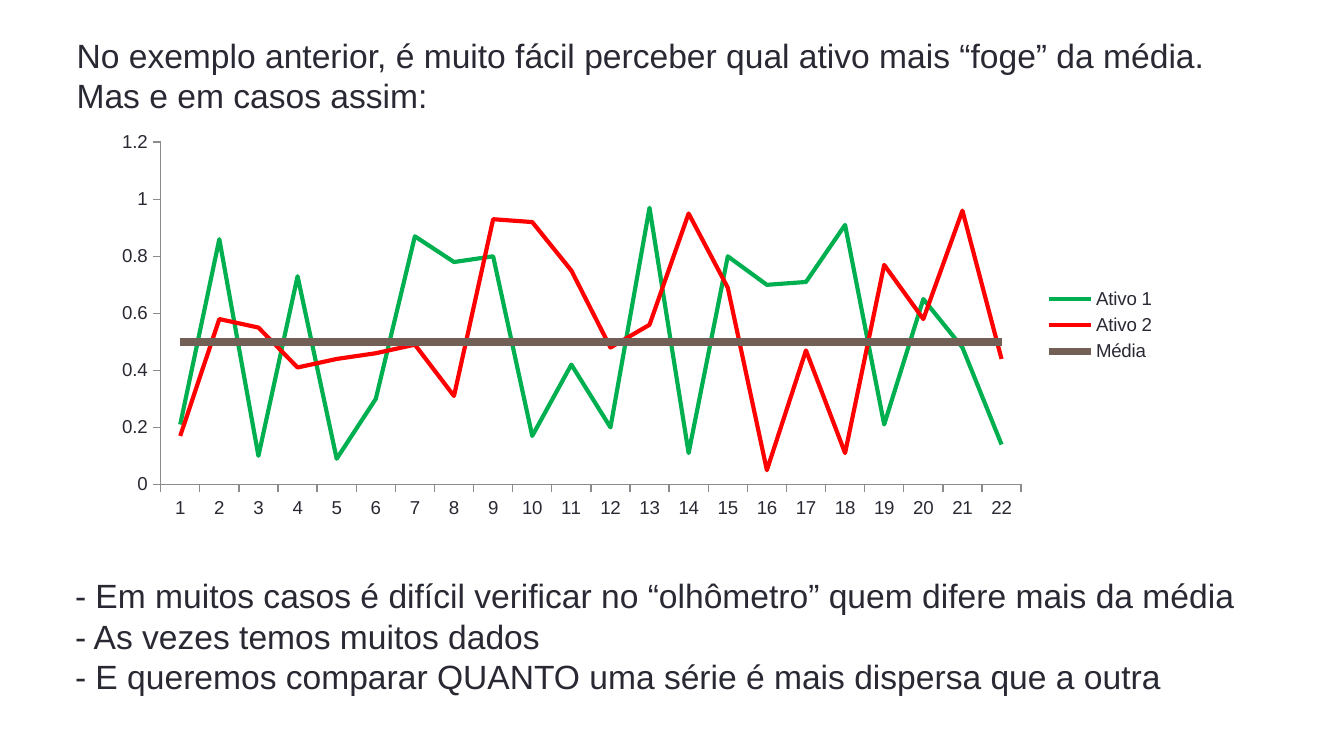
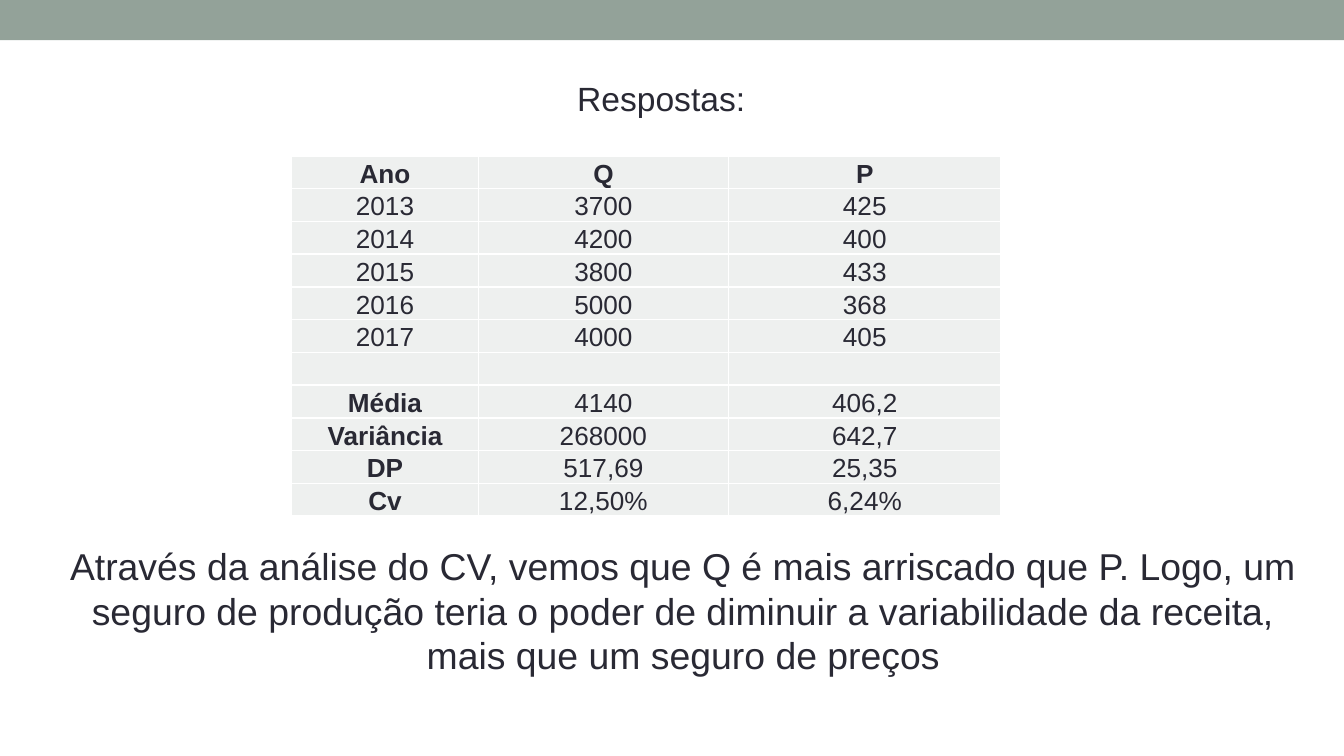
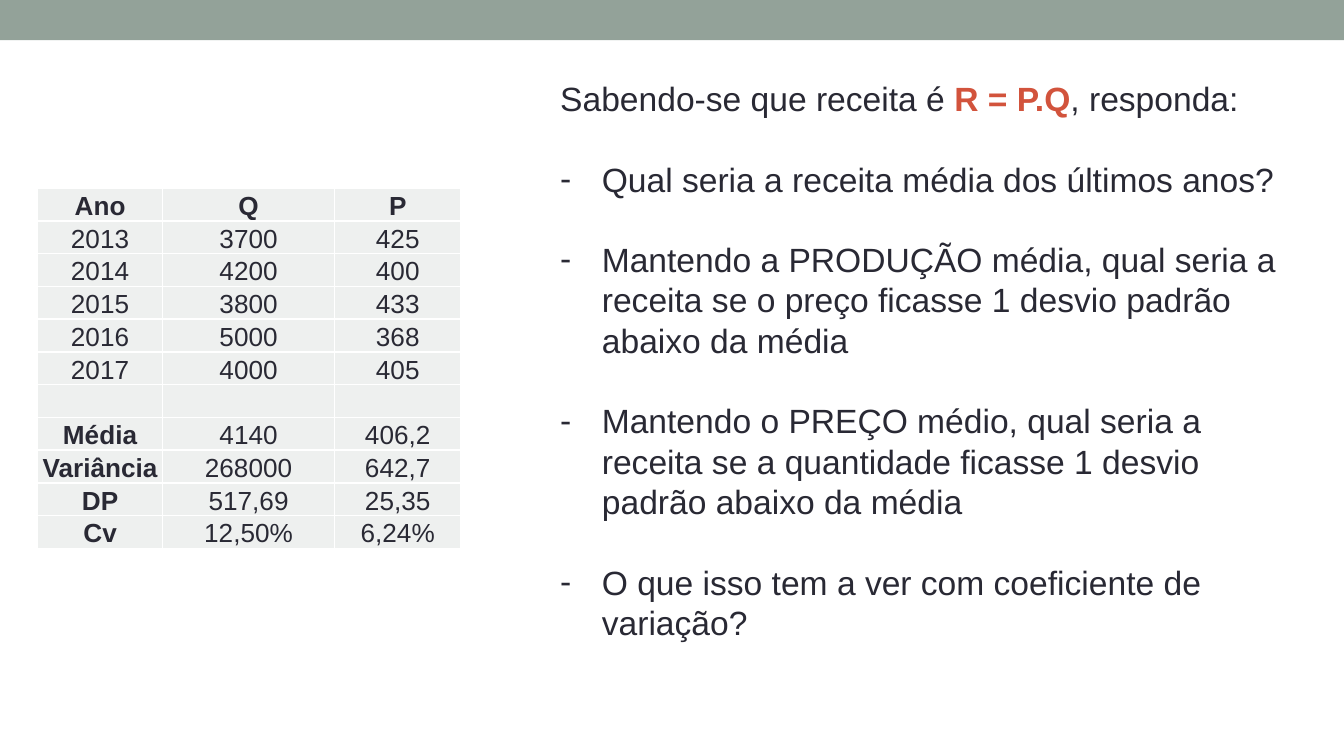
"""Builds three slides on dispersion, with a line chart and two tables of statistics."""
import dataclasses

import lxml.etree
import pptx
import pptx.chart.data
import pptx.dml.color
import pptx.enum.chart
import pptx.enum.shapes
import pptx.enum.text
import pptx.oxml.ns
import pptx.util

Inches, Pt = pptx.util.Inches, pptx.util.Pt
ALIGN = pptx.enum.text.PP_ALIGN
ANCHOR = pptx.enum.text.MSO_ANCHOR
qn = pptx.oxml.ns.qn


@dataclasses.dataclass(frozen=True)
class Theme:
    """Colours, font and type sizes of the deck."""
    ink: str = "292934"
    accent: str = "D2533C"
    band: str = "93A299"
    cell: str = "EEF0EF"
    border: str = "FFFFFF"
    axis: str = "8B8B8B"
    font: str = "Arial"
    body: int = 18
    closing: int = 20
    table: int = 14
    chart: int = 10
    gap: float = 21.6


THEME = Theme()
SLIDE_WIDTH = Inches(10)
SLIDE_HEIGHT = SLIDE_WIDTH * 9 // 16

INTRO = ("No exemplo anterior, é muito fácil perceber qual ativo mais “foge” da média. "
         "Mas e em casos assim:")
REMARKS = [
    "- Em muitos casos é difícil verificar no “olhômetro” quem difere mais da média",
    "- As vezes temos muitos dados",
    "- E queremos comparar QUANTO uma série é mais dispersa que a outra",
]
DAYS = 22
ASSETS = [
    ("Ativo 1", "00B050", 2.25,
     [0.21, 0.86, 0.1, 0.73, 0.09, 0.3, 0.87, 0.78, 0.8, 0.17, 0.42,
      0.2, 0.97, 0.11, 0.8, 0.7, 0.71, 0.91, 0.21, 0.65, 0.48, 0.14]),
    ("Ativo 2", "FF0000", 2.25,
     [0.17, 0.58, 0.55, 0.41, 0.44, 0.46, 0.49, 0.31, 0.93, 0.92, 0.75,
      0.48, 0.56, 0.95, 0.69, 0.05, 0.47, 0.11, 0.77, 0.58, 0.96, 0.44]),
    ("Média", "726056", 4, [0.5] * DAYS),
]
STATISTICS = [
    ("Ano", "Q", "P"),
    ("2013", "3700", "425"),
    ("2014", "4200", "400"),
    ("2015", "3800", "433"),
    ("2016", "5000", "368"),
    ("2017", "4000", "405"),
    ("", "", ""),
    ("Média", "4140", "406,2"),
    ("Variância", "268000", "642,7"),
    ("DP", "517,69", "25,35"),
    ("Cv", "12,50%", "6,24%"),
]
STATISTICS_HEIGHT = 2.68
BOLD_LABELS = {"Média", "Variância", "DP", "Cv"}
ANSWERS = "Respostas:"
CONCLUSION = ("Através da análise do CV, vemos que Q é mais arriscado que P. Logo, um seguro de "
              "produção teria o poder de diminuir a variabilidade da receita, mais que um seguro "
              "de preços")
REVENUE = ("Sabendo-se que receita é ", "R = P.Q", ", responda:")
QUESTIONS = [
    "Qual seria a receita média dos últimos anos?",
    "Mantendo a PRODUÇÃO média, qual seria a receita se o preço ficasse 1 desvio padrão "
    "abaixo da média",
    "Mantendo o PREÇO médio, qual seria a receita se a quantidade ficasse 1 desvio padrão "
    "abaixo da média",
    "O que isso tem a ver com coeficiente de variação?",
]


def rgb(code):
    return pptx.dml.color.RGBColor.from_string(code)


def style(font, size, color=THEME.ink, bold=False):
    font.name, font.size, font.bold = THEME.font, Pt(size), bold
    font.color.rgb = rgb(color)


def write(frame, lines, size=THEME.body, align=ALIGN.LEFT):
    frame.word_wrap = True
    frame.vertical_anchor = ANCHOR.TOP
    frame.auto_size = pptx.enum.text.MSO_AUTO_SIZE.SHAPE_TO_FIT_TEXT
    for index, line in enumerate(lines):
        paragraph = frame.add_paragraph() if index else frame.paragraphs[0]
        paragraph.text = line
        paragraph.alignment = align
        style(paragraph.font, size)
    return frame


def add_text(slide, box, lines, **options):
    return write(slide.shapes.add_textbox(*map(Inches, box)).text_frame, lines, **options)


def set_title(slide, box, text, **options):
    title = slide.shapes.title
    title.left, title.top, title.width, title.height = map(Inches, box)
    write(title.text_frame, [text], **options)


def add_band(slide):
    band = slide.shapes.add_shape(pptx.enum.shapes.MSO_SHAPE.RECTANGLE,
                                  0, 0, SLIDE_WIDTH, Inches(0.3))
    band.shadow.inherit = False
    band.fill.solid()
    band.fill.fore_color.rgb = rgb(THEME.band)
    band.line.fill.background()


def set_borders(cell):
    properties = cell._tc.get_or_add_tcPr()
    for index, side in enumerate(("lnL", "lnR", "lnT", "lnB")):
        border = lxml.etree.Element(qn(f"a:{side}"), w=str(Pt(1)))
        fill = lxml.etree.SubElement(border, qn("a:solidFill"))
        lxml.etree.SubElement(fill, qn("a:srgbClr"), val=THEME.border)
        properties.insert(index, border)


def add_statistics(slide, left, top, widths):
    table = slide.shapes.add_table(
        len(STATISTICS), len(widths), Inches(left), Inches(top),
        Inches(sum(widths)), Inches(STATISTICS_HEIGHT)).table
    table.first_row = table.horz_banding = False
    for column, width in zip(table.columns, widths):
        column.width = Inches(width)
    for r, values in enumerate(STATISTICS):
        for c, value in enumerate(values):
            cell = table.cell(r, c)
            cell.margin_left = cell.margin_right = cell.margin_top = Inches(0.01)
            cell.margin_bottom = 0
            cell.vertical_anchor = ANCHOR.BOTTOM
            cell.fill.solid()
            cell.fill.fore_color.rgb = rgb(THEME.cell)
            set_borders(cell)
            cell.text = value
            paragraph = cell.text_frame.paragraphs[0]
            paragraph.alignment = ALIGN.CENTER
            style(paragraph.font, THEME.table, bold=r == 0 or value in BOLD_LABELS)


def add_asset_chart(slide, box):
    data = pptx.chart.data.CategoryChartData()
    data.categories = [str(day) for day in range(1, DAYS + 1)]
    for name, _, _, values in ASSETS:
        data.add_series(name, values)
    chart = slide.shapes.add_chart(pptx.enum.chart.XL_CHART_TYPE.LINE,
                                   *map(Inches, box), data).chart
    style(chart.font, THEME.chart)
    chart.has_title = False
    chart.has_legend = True
    chart.legend.position = pptx.enum.chart.XL_LEGEND_POSITION.RIGHT
    chart.legend.include_in_layout = False
    chart.plots[0].vary_by_categories = False
    chart.value_axis.has_major_gridlines = False
    chart.value_axis.minimum_scale, chart.value_axis.maximum_scale = 0, 1.2
    chart.value_axis.major_unit = 0.2
    for axis in (chart.category_axis, chart.value_axis):
        axis.major_tick_mark = pptx.enum.chart.XL_TICK_MARK.OUTSIDE
        axis.format.line.color.rgb = rgb(THEME.axis)
        axis.format.line.width = Pt(0.75)
    for series, (_, color, width, _) in zip(chart.plots[0].series, ASSETS):
        series.smooth = False
        series.marker.style = pptx.enum.chart.XL_MARKER_STYLE.NONE
        series.format.line.color.rgb = rgb(color)
        series.format.line.width = Pt(width)


def add_questions(slide, box):
    frame = add_text(slide, box, [""] + QUESTIONS)
    opening, *questions = frame.paragraphs
    for part in REVENUE:
        opening.add_run().text = part
    formula = opening.runs[1]
    style(formula.font, THEME.body, THEME.accent, bold=True)
    for question in questions:
        question.space_before = Pt(THEME.gap)
        properties = question._p.get_or_add_pPr()
        properties.set("marL", str(Inches(0.31)))
        properties.set("indent", str(-Inches(0.31)))
        defaults = properties.find(qn("a:defRPr"))
        for tag, attributes in (("a:buFont", {"typeface": THEME.font}),
                                ("a:buChar", {"char": "-"})):
            defaults.addprevious(lxml.etree.Element(qn(tag), attributes))


def main():
    deck = pptx.Presentation()
    deck.slide_width, deck.slide_height = SLIDE_WIDTH, SLIDE_HEIGHT
    title_only, blank = deck.slide_layouts[5], deck.slide_layouts[6]

    comparison = deck.slides.add_slide(title_only)
    set_title(comparison, (0.47, 0.21, 8.98, 0.71), INTRO)
    add_text(comparison, (0.46, 4.23, 8.98, 1.01), REMARKS)
    add_asset_chart(comparison, (0.75, 0.92, 7.95, 3))

    answers = deck.slides.add_slide(title_only)
    add_band(answers)
    add_statistics(answers, 2.17, 1.16, (1.39, 1.86, 2.03))
    set_title(answers, (1.85, 0.53, 6.14, 0.4), ANSWERS, align=ALIGN.CENTER)
    add_text(answers, (0.28, 3.99, 9.61, 1.11), [CONCLUSION],
             size=THEME.closing, align=ALIGN.CENTER)

    exercise = deck.slides.add_slide(blank)
    add_band(exercise)
    add_statistics(exercise, 0.28, 1.4, (0.93, 1.28, 0.94))
    add_questions(exercise, (4.07, 0.53, 5.59, 4.64))

    deck.save("out.pptx")


if __name__ == "__main__":
    main()
